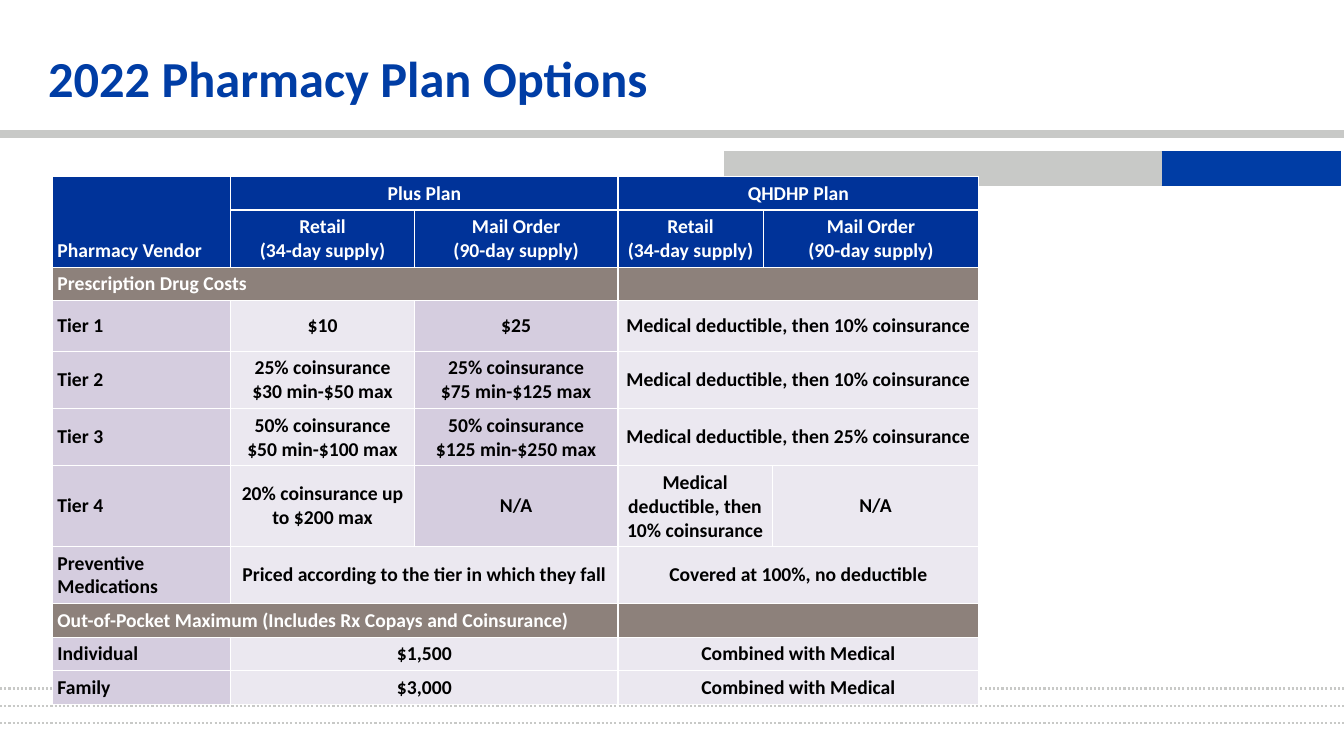
from lxml import etree
from pptx import Presentation
from pptx.dml.color import RGBColor
from pptx.enum.dml import MSO_LINE
from pptx.enum.shapes import MSO_CONNECTOR, MSO_SHAPE
from pptx.enum.text import MSO_ANCHOR, PP_ALIGN
from pptx.oxml.ns import qn
from pptx.util import Inches, Pt

TITLE = "2022 Pharmacy Plan Options"
DEDUCTIBLE_10 = "Medical deductible, then 10% coinsurance"
DEDUCTIBLE_25 = "Medical deductible, then 25% coinsurance"
RETAIL = "Retail\n(34-day supply)"
MAIL_ORDER = "Mail Order\n(90-day supply)"

# None continues the cell to its left
PLAN_ROWS = [
    ["Pharmacy Vendor", "Plus Plan", None, "QHDHP Plan", None, None],
    ["", RETAIL, MAIL_ORDER, RETAIL, MAIL_ORDER, None],
    ["Prescription Drug Costs", None, None, "", None, None],
    ["Tier 1", "$10", "$25", DEDUCTIBLE_10, None, None],
    ["Tier 2", "25% coinsurance\n$30 min-$50 max", "25% coinsurance\n$75 min-$125 max",
     DEDUCTIBLE_10, None, None],
    ["Tier 3", "50% coinsurance\n$50 min-$100 max", "50% coinsurance\n$125 min-$250 max",
     DEDUCTIBLE_25, None, None],
    ["Tier 4", "20% coinsurance up to $200 max", "N/A", DEDUCTIBLE_10, None, "N/A"],
    ["Preventive Medications", "Priced according to the tier in which they fall", None,
     "Covered at 100%, no deductible", None, None],
    ["Out-of-Pocket Maximum (Includes Rx Copays and Coinsurance)", None, None, "", None, None],
    ["Individual", "$1,500", None, "Combined with Medical", None, None],
    ["Family", "$3,000", None, "Combined with Medical", None, None],
]
COLUMN_WIDTHS = [1.77, 1.82, 2.02, 1.44, 0.09, 2.05]
ROW_HEIGHTS = [0.32, 0.52, 0.33, 0.5, 0.52, 0.55, 0.52, 0.33, 0.33, 0.33, 0.33]
HEADER_ROWS = (0, 1)
SECTION_ROWS = (2, 8)
LILAC_COLUMNS = (0, 2)

BLUE = RGBColor(0x00, 0x3D, 0xA5)
GRAY = RGBColor(0xC8, 0xC9, 0xC7)
NAVY = RGBColor(0x00, 0x33, 0x99)
TAUPE = RGBColor(0x8D, 0x81, 0x7B)
LILAC = RGBColor(0xD5, 0xCD, 0xDF)
PALE = RGBColor(0xEB, 0xE8, 0xF0)
WHITE = RGBColor(0xFF, 0xFF, 0xFF)
BLACK = RGBColor(0x00, 0x00, 0x00)

RULES = [(1.33, 6, None)] + [(y, 1.5, MSO_LINE.ROUND_DOT) for y in (6.83, 7, 7.17)]
BARS = [(11.52, 1.78, BLUE), (7.19, 4.33, GRAY)]


def style_text(frame, size, color, align):
    for para in frame.paragraphs:
        para.alignment = align
        for span in para.runs:
            span.font.name = "Calibri"
            span.font.size = Pt(size)
            span.font.bold = True
            span.font.color.rgb = color


def add_rule(page, y, weight, dash):
    rule = page.shapes.add_connector(
        MSO_CONNECTOR.STRAIGHT, 0, Inches(y), Inches(13.33), Inches(y))
    rule.line.color.rgb = GRAY
    rule.line.width = Pt(weight)
    if dash:
        rule.line.dash_style = dash
    etree.SubElement(rule._element.spPr, qn("a:effectLst"))


def add_bar(page, left, width, color):
    bar = page.shapes.add_shape(
        MSO_SHAPE.RECTANGLE, Inches(left), Inches(1.5), Inches(width), Inches(0.34))
    bar.shadow.inherit = False
    bar.fill.solid()
    bar.fill.fore_color.rgb = color
    bar.line.color.rgb = color
    bar.line.width = Pt(0.75)


def add_title(page):
    box = page.shapes.add_textbox(Inches(0.38), Inches(0.37), Inches(12.44), Inches(0.8))
    frame = box.text_frame
    frame.word_wrap = True
    frame.vertical_anchor = MSO_ANCHOR.MIDDLE
    frame.text = TITLE
    style_text(frame, 36, BLUE, PP_ALIGN.LEFT)


def add_borders(cell):
    properties = cell._tc.get_or_add_tcPr()
    for side in ("lnL", "lnR", "lnT", "lnB"):
        line = etree.SubElement(properties, qn(f"a:{side}"), w=str(Pt(1)))
        fill = etree.SubElement(line, qn("a:solidFill"))
        etree.SubElement(fill, qn("a:srgbClr"), val=str(WHITE))


def cell_colors(row, column):
    if row in HEADER_ROWS:
        return NAVY, WHITE
    if row in SECTION_ROWS:
        return TAUPE, WHITE
    return (LILAC if column in LILAC_COLUMNS else PALE), BLACK


def fill_cell(cell, row, column, text):
    background, color = cell_colors(row, column)
    add_borders(cell)
    cell.fill.solid()
    cell.fill.fore_color.rgb = background
    cell.margin_left = cell.margin_right = Inches(0.05)
    cell.margin_top = cell.margin_bottom = Inches(0.05)
    cell.vertical_anchor = MSO_ANCHOR.BOTTOM if row == 0 and column == 0 else MSO_ANCHOR.MIDDLE
    if text:
        cell.text_frame.text = text
        style_text(cell.text_frame, 14, color, PP_ALIGN.CENTER if column else PP_ALIGN.LEFT)
    else:
        etree.SubElement(cell.text_frame.paragraphs[0]._p, qn("a:endParaRPr"), sz="1400")


def add_plan_table(page):
    holder = page.shapes.add_table(
        len(PLAN_ROWS), len(COLUMN_WIDTHS), Inches(0.52), Inches(1.75), Inches(9.18), Inches(5.23))
    table = holder.table
    table.first_row = table.horz_banding = False
    for column, width in zip(table.columns, COLUMN_WIDTHS):
        column.width = Inches(width)
    for row, height in zip(table.rows, ROW_HEIGHTS):
        row.height = Inches(height)
    holder.height = Inches(5.23)
    for row, texts in enumerate(PLAN_ROWS):
        for column, text in enumerate(texts):
            fill_cell(table.cell(row, column), row, column, text)
        starts = [column for column, text in enumerate(texts) if text is not None]
        for start, following in zip(starts, starts[1:] + [len(texts)]):
            if following - start > 1:
                table.cell(row, start).merge(table.cell(row, following - 1))
    table.cell(0, 0).merge(table.cell(1, 0))


def main():
    deck = Presentation()
    deck.slide_width, deck.slide_height = Inches(13.33), Inches(7.5)
    page = deck.slides.add_slide(deck.slide_layouts[6])
    for rule in RULES[:1]:
        add_rule(page, *rule)
    for bar in BARS:
        add_bar(page, *bar)
    for rule in RULES[1:]:
        add_rule(page, *rule)
    add_title(page)
    add_plan_table(page)
    deck.save("out.pptx")


if __name__ == "__main__":
    main()
